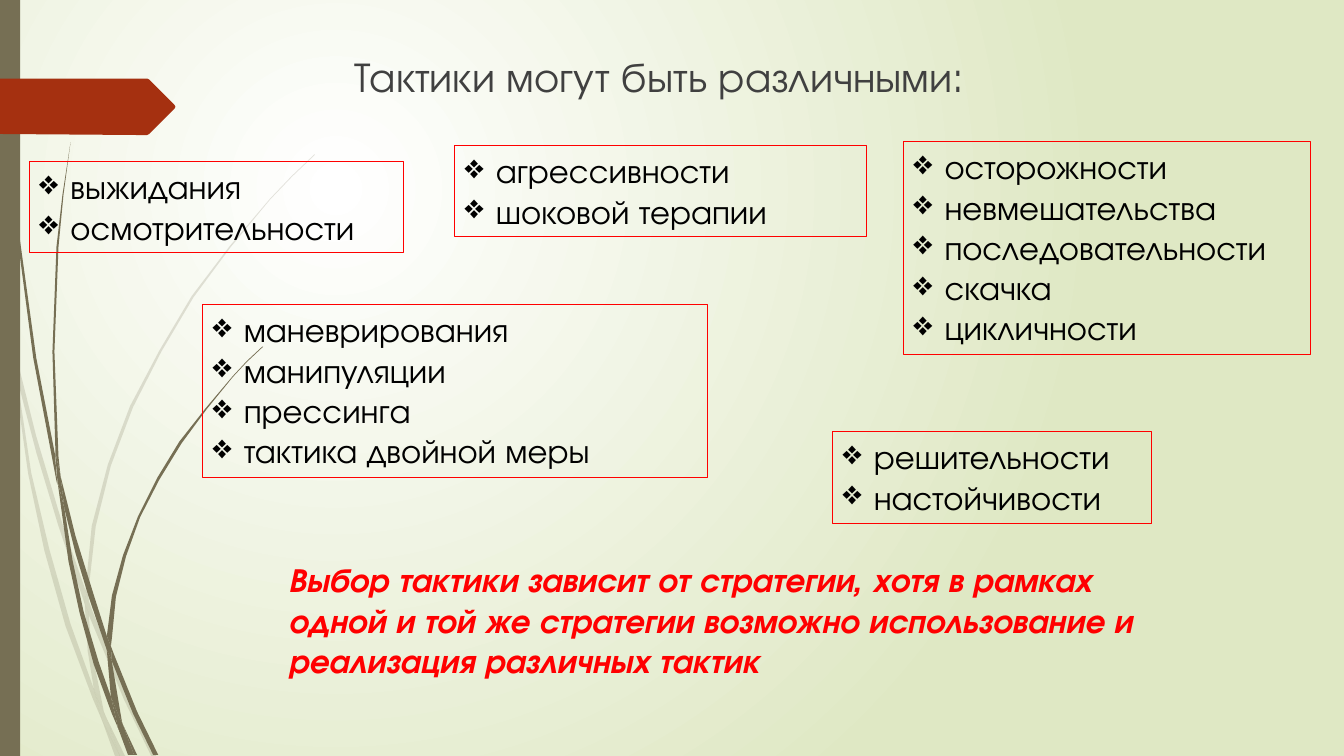
from dataclasses import dataclass

from lxml.etree import SubElement
from pptx import Presentation
from pptx.dml.color import RGBColor
from pptx.enum.shapes import MSO_SHAPE
from pptx.enum.text import MSO_ANCHOR, MSO_AUTO_SIZE, PP_ALIGN
from pptx.oxml.ns import qn
from pptx.util import Inches, Pt

TITLE = "Тактики могут быть различными:"
TACTICS = [  # left, top, width, height, items
    (0.29, 1.6, 3.71, 0.91, ["выжидания", "осмотрительности"]),
    (4.51, 1.44, 4.08, 0.91, ["агрессивности", "шоковой терапии"]),
    (8.96, 1.4, 4.04, 2.12, ["осторожности", "невмешательства", "последовательности",
                             "скачка", "цикличности"]),
    (8.26, 4.28, 3.16, 0.91, ["решительности", "настойчивости"]),
    (2.01, 3.02, 5.01, 1.72, ["маневрирования", "манипуляции", "прессинга",
                              "тактика двойной меры"]),
]
CONCLUSION = ("Выбор тактики зависит от стратегии, хотя в рамках одной и той же стратегии "
              "возможно использование и реализация различных тактик")

# Outlines of the grass pieces, in inches.
PALE_GRASS = [
    [(0.11, 3.5), (0.09, 3.22), (0, 2.82), (0, 2.99), (0.1, 3.44)],
    [(0.58, 5.22), (0.84, 5.99), (0.85, 5.86), (0.62, 5.2), (0.36, 4.33), (0.14, 3.45),
     (0.17, 3.76), (0.36, 4.49)],
    [(0.92, 6.07), (0.88, 5.96), (0.88, 6.1), (1.23, 6.94), (1.5, 7.5), (1.55, 7.5),
     (1.27, 6.92)],
    [(1.19, 7.5), (1.24, 7.5), (1.05, 7.11)],
    [(0.93, 6.83), (0.7, 6.19), (0.49, 5.45), (0.31, 4.69), (0.17, 3.76), (0.11, 3.5),
     (0.28, 4.7), (0.44, 5.46), (0.65, 6.21), (0.92, 6.93), (1.01, 7.14), (0.99, 7.07)],
    [(0.84, 5.99), (0.87, 6.46), (0.93, 6.83), (0.96, 6.92), (1.05, 7.11), (1.03, 7.06),
     (0.91, 6.46), (0.88, 6.1), (0.88, 6.08)],
    [(0.88, 5.84), (0.95, 5.22), (1.1, 4.62), (1.32, 4.04), (1.6, 3.49), (1.92, 2.95),
     (2.29, 2.45), (2.68, 1.98), (2.9, 1.75), (3.12, 1.54), (3.12, 1.53), (2.89, 1.75),
     (2.68, 1.97), (2.28, 2.44), (1.9, 2.94), (1.58, 3.48), (1.29, 4.03), (1.07, 4.61),
     (0.91, 5.22), (0.85, 5.84), (0.85, 5.86), (0.88, 5.96)],
    [(1.01, 7.14), (1.14, 7.5), (1.19, 7.5)],
    [(0.88, 6.08), (0.88, 6.1), (0.88, 5.96), (0.85, 5.86), (0.84, 5.99)],
    [(0.96, 6.92), (0.93, 6.83), (0.99, 7.07), (1.01, 7.14), (1.19, 7.5), (1.05, 7.11)],
]
DARK_GRASS = [
    [(0.07, 1.1), (0.17, 2.33), (0.33, 3.55), (0.56, 4.77), (0.57, 4.81), (0.55, 4.57),
     (0.55, 4.53), (0.36, 3.55), (0.19, 2.32), (0.08, 1.09), (0.05, 0.48), (0.04, 0),
     (0.03, 0), (0.04, 0.48)],
    [(0.88, 5.92), (1.06, 6.45), (1.06, 6.33), (1.06, 6.31), (0.93, 5.9), (0.75, 5.32),
     (0.6, 4.72), (0.64, 5.05), (0.75, 5.49)],
    [(1.13, 6.49), (1.1, 6.41), (1.11, 6.56), (1.32, 7.08), (1.52, 7.49), (1.57, 7.49),
     (1.36, 7.06)],
    [(1.1, 6.91), (0.98, 6.57), (0.83, 6.07), (0.72, 5.56), (0.64, 5.05), (0.57, 4.77),
     (0.68, 5.57), (0.79, 6.08), (0.93, 6.59), (1.11, 7.08), (1.17, 7.22), (1.16, 7.17)],
    [(0.6, 4.72), (0.58, 4.53), (0.54, 3.49), (0.58, 2.45), (0.63, 1.93), (0.7, 1.41),
     (0.62, 1.93), (0.56, 2.45), (0.52, 3.49), (0.55, 4.49)],
    [(1.33, 7.49), (1.36, 7.49), (1.22, 7.19)],
    [(0.57, 4.77), (0.64, 5.05), (0.6, 4.72), (0.55, 4.49), (0.55, 4.53)],
    [(1.11, 6.33), (1.15, 5.92), (1.25, 5.52), (1.39, 5.13), (1.58, 4.76), (1.8, 4.4),
     (2.05, 4.06), (2.31, 3.74), (2.45, 3.59), (2.61, 3.44), (2.6, 3.44), (2.45, 3.58),
     (2.31, 3.73), (2.04, 4.05), (1.78, 4.38), (1.56, 4.74), (1.37, 5.12), (1.22, 5.51),
     (1.11, 5.91), (1.06, 6.31), (1.1, 6.41)],
    [(1.17, 7.22), (1.27, 7.49), (1.31, 7.49)],
    [(1.06, 6.45), (1.1, 6.91), (1.16, 7.06), (1.22, 7.19), (1.21, 7.16), (1.11, 6.56),
     (1.09, 6.51)],
    [(1.06, 6.45), (1.09, 6.51), (1.11, 6.56), (1.1, 6.41), (1.06, 6.31), (1.06, 6.33)],
    [(1.16, 7.06), (1.1, 6.91), (1.16, 7.17), (1.17, 7.22), (1.3, 7.49), (1.33, 7.49),
     (1.22, 7.19)],
]
ARROW = [(1.74, 1.06), (1.73, 1.08), (1.48, 1.33), (1.46, 1.34), (1.36, 1.34), (0, 1.33),
         (0, 0.78), (1.36, 0.78), (1.46, 0.78), (1.48, 0.79), (1.73, 1.04)]


@dataclass(frozen=True)
class Theme:
    font: str = "TeX Gyre Adventor"
    bullet_font: str = "OpenSymbol"
    title_size: int = 30
    text_size: int = 24
    title: str = "404040"
    ink: str = "000000"
    accent: str = "FF0000"
    grass: str = "766F54"
    arrow: str = "A53010"
    glow: str = "FFFFFF"
    ground: str = "DFE8C4"
    pale_alpha: int = 20000


THEME = Theme()
HEIGHT = 7.5


def rgb(code):
    return RGBColor.from_string(code)


def paint_background(page):
    fill = page.background.fill
    fill.gradient()
    for stop, position, color in zip(fill.gradient_stops, (0, 1), (THEME.glow, THEME.ground)):
        stop.position = position
        stop.color.rgb = rgb(color)
    properties = page.background._cSld.find(".//" + qn("a:gradFill"))
    properties.remove(properties.find(qn("a:lin")))
    radial = SubElement(properties, qn("a:path"), path="circle")
    SubElement(radial, qn("a:fillToRect"), l="50000", t="50000", r="100000", b="100000")


def paint(shape, color):
    shape.shadow.inherit = False
    shape.fill.solid()
    shape.fill.fore_color.rgb = rgb(color)
    shape.line.fill.background()


def add_outline(page, points, color, alpha=None):
    start, *rest = [(Inches(x), Inches(y)) for x, y in points]
    builder = page.shapes.build_freeform(*start)
    builder.add_line_segments(rest, close=True)
    outline = builder.convert_to_shape()
    paint(outline, color)
    if alpha:
        fill_color = outline._element.spPr.find(".//" + qn("a:srgbClr"))
        SubElement(fill_color, qn("a:alpha"), val=str(alpha))


def add_span(para, text, size, color, emphasis=False):
    span = para.add_run()
    span.text = text
    font = span.font
    font.name, font.size = THEME.font, Pt(size)
    font.bold = font.italic = emphasis
    font.color.rgb = rgb(color)


def add_tactics(page, left, top, width, height, items):
    box = page.shapes.add_shape(MSO_SHAPE.RECTANGLE, *map(Inches, (left, top, width, height)))
    box.shadow.inherit = False
    box.fill.background()
    box.line.color.rgb = rgb(THEME.accent)
    box.line.width = Pt(0.75)
    frame = box.text_frame
    frame.word_wrap = True
    frame.vertical_anchor = MSO_ANCHOR.TOP
    frame.auto_size = MSO_AUTO_SIZE.SHAPE_TO_FIT_TEXT
    for index, item in enumerate(items):
        para = frame.add_paragraph() if index else frame.paragraphs[0]
        para.alignment = PP_ALIGN.LEFT
        properties = para._p.get_or_add_pPr()
        properties.set("marL", str(Inches(0.31)))
        properties.set("indent", str(-Inches(0.31)))
        SubElement(properties, qn("a:buFont"), typeface=THEME.bullet_font)
        SubElement(properties, qn("a:buChar"), char="❖")
        add_span(para, item, THEME.text_size, THEME.ink)


def main():
    deck = Presentation()
    deck.slide_width, deck.slide_height = Inches(13.33), Inches(HEIGHT)
    page = deck.slides.add_slide(deck.slide_layouts[5])
    paint_background(page)

    for points in PALE_GRASS:
        add_outline(page, points, THEME.grass, THEME.pale_alpha)
    for points in DARK_GRASS:
        add_outline(page, points, THEME.grass)
    strip = page.shapes.add_shape(MSO_SHAPE.RECTANGLE, 0, 0, Inches(0.2), Inches(HEIGHT))
    paint(strip, THEME.grass)
    add_outline(page, ARROW, THEME.arrow)

    title = page.shapes.title
    title.left, title.top, title.width, title.height = map(Inches, (1.67, 0.45, 9.75, 0.61))
    title.text_frame.auto_size = MSO_AUTO_SIZE.NONE
    title.text_frame.vertical_anchor = MSO_ANCHOR.TOP
    heading = title.text_frame.paragraphs[0]
    heading.alignment = PP_ALIGN.CENTER
    add_span(heading, TITLE, THEME.title_size, THEME.title)

    for tactics in TACTICS:
        add_tactics(page, *tactics)

    conclusion = page.shapes.add_textbox(*map(Inches, (2.76, 5.5, 8.96, 1.31))).text_frame
    conclusion.word_wrap = True
    conclusion.auto_size = MSO_AUTO_SIZE.SHAPE_TO_FIT_TEXT
    add_span(conclusion.paragraphs[0], CONCLUSION, THEME.text_size, THEME.accent, emphasis=True)
    deck.save("out.pptx")


if __name__ == "__main__":
    main()
